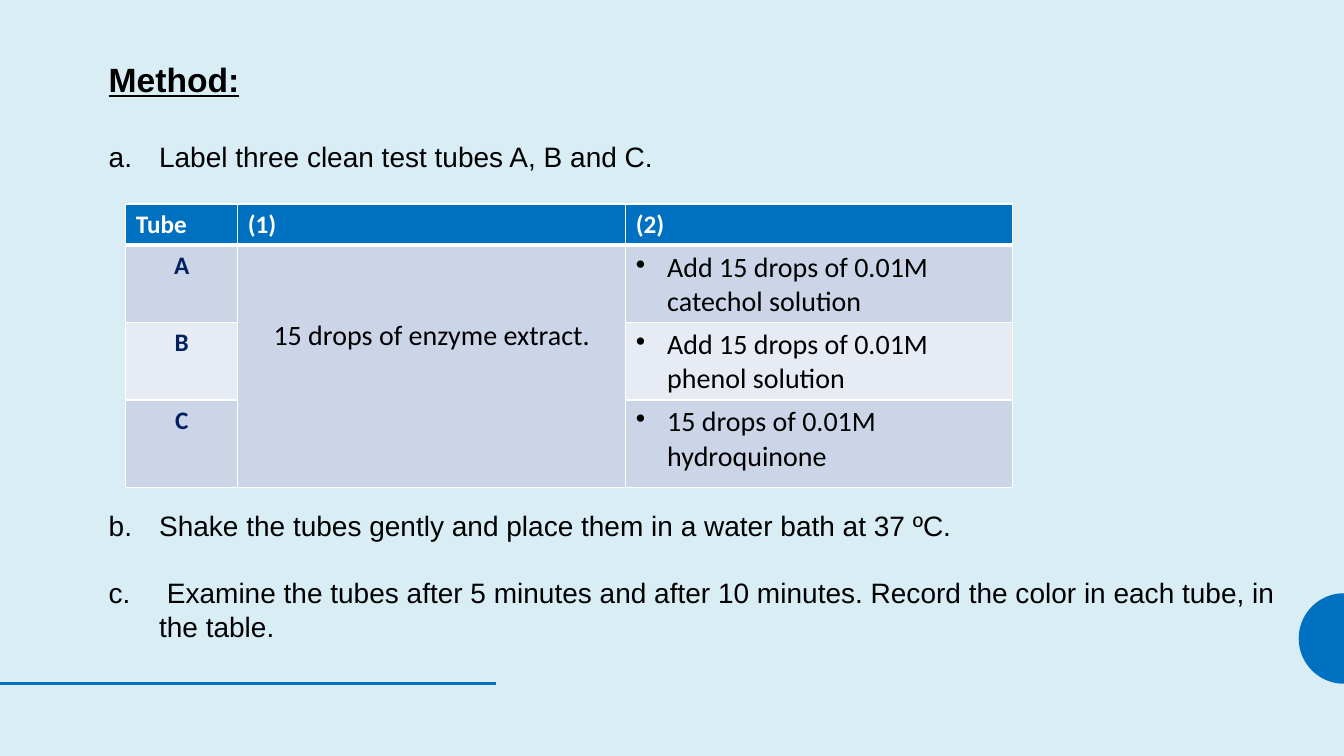
from dataclasses import dataclass
from math import cos, pi, sin

from lxml import etree
from pptx import Presentation
from pptx.dml.color import RGBColor
from pptx.enum.shapes import MSO_CONNECTOR
from pptx.enum.text import MSO_ANCHOR, PP_ALIGN
from pptx.oxml.ns import qn
from pptx.util import Cm, Pt


@dataclass(frozen=True)
class Theme:
    background: str = "D9EDF5"
    accent: str = "0070C0"
    ink: str = "000000"
    navy: str = "002060"
    white: str = "FFFFFF"
    band_dark: str = "CCD5E8"
    band_light: str = "E7EBF4"
    heading_font: str = "Arial"
    table_font: str = "Calibri"
    title: int = 24
    body: int = 20
    label: int = 18
    leading: float = 1.2


def paint(fill, color):
    fill.solid()
    fill.fore_color.rgb = RGBColor.from_string(color)


def write(p, text, *, font, size, color, bold=False, underline=False,
          align=PP_ALIGN.LEFT, leading=None, before=0, bullet=None, indent=0):
    """Fill a paragraph; bullet is a (tag, attributes) pair."""
    if bullet:
        tag, attributes = bullet
        pPr = p._p.get_or_add_pPr()
        pPr.set("marL", str(Cm(indent)))
        pPr.set("indent", str(-Cm(indent)))
        etree.SubElement(pPr, qn(tag), attributes)
    p.alignment = align
    if leading:
        p.line_spacing = Pt(leading)
    if before:
        p.space_before = Pt(before)
    r = p.add_run()
    r.text = text
    r.font.name = font
    r.font.size = Pt(size)
    r.font.bold = bold
    r.font.underline = underline
    r.font.color.rgb = RGBColor.from_string(color)


class SlideBuilder:
    def __init__(self, slide, theme):
        self.slide, self.theme = slide, theme
        paint(slide.background.fill, theme.background)

    def half_disc(self, cx, cy, radius, steps=48):
        angles = [pi / 2 + pi * i / steps for i in range(steps + 1)]
        points = [(Cm(cx + radius * cos(a)), Cm(cy + radius * sin(a))) for a in angles]
        builder = self.slide.shapes.build_freeform(*points[0])
        builder.add_line_segments(points[1:], close=True)
        sp = builder.convert_to_shape()
        sp.shadow.inherit = False
        paint(sp.fill, self.theme.accent)
        sp.line.fill.background()

    def rule(self, x1, x2, y):
        line = self.slide.shapes.add_connector(
            MSO_CONNECTOR.STRAIGHT, Cm(x1), Cm(y), Cm(x2), Cm(y))
        line.line.color.rgb = RGBColor.from_string(self.theme.accent)
        line.line.width = Pt(2)
        etree.SubElement(line._element.spPr, qn("a:effectLst"))

    def steps(self, box, title, items):
        """Title, then lettered items given as (text, blank lines above)."""
        t = self.theme
        tf = self.slide.shapes.add_textbox(*map(Cm, box)).text_frame
        tf.word_wrap = True
        tf.vertical_anchor = MSO_ANCHOR.MIDDLE
        write(tf.paragraphs[0], title, font=t.heading_font, size=t.title, color=t.ink,
              bold=True, underline=True, leading=t.title * t.leading)
        for text, before in items:
            write(tf.add_paragraph(), text, font=t.heading_font, size=t.body, color=t.ink,
                  leading=t.body * t.leading, before=before, indent=1.27,
                  bullet=("a:buAutoNum", {"type": "alphaLcPeriod"}))

    def cell(self, cell, text, fill, top=1, bottom=1, **style):
        tcPr = cell._tc.get_or_add_tcPr()
        for side, width in (("L", 1), ("R", 1), ("T", top), ("B", bottom)):
            ln = etree.SubElement(tcPr, qn(f"a:ln{side}"), {"w": str(Pt(width))})
            solid = etree.SubElement(ln, qn("a:solidFill"))
            etree.SubElement(solid, qn("a:srgbClr"), {"val": self.theme.white})
        paint(cell.fill, fill)
        if text:
            write(cell.text_frame.paragraphs[0], text, font=self.theme.table_font, **style)

    def tube_table(self, left, top, widths, heights, header, shared, tubes):
        t = self.theme
        table = self.slide.shapes.add_table(
            len(heights), len(widths), Cm(left), Cm(top),
            Cm(sum(widths)), Cm(sum(heights))).table
        for column, width in zip(table.columns, widths):
            column.width = Cm(width)
        for row, height in zip(table.rows, heights):
            row.height = Cm(height)

        # Header row
        for i, text in enumerate(header):
            self.cell(table.cell(0, i), text, t.accent, bottom=3,
                      size=t.label, color=t.white, bold=True)

        # One row per tube, with a shared middle cell
        for i, (tube, step) in enumerate(tubes, 1):
            fill = t.band_dark if i % 2 else t.band_light
            edge = 3 if i == 1 else 1
            self.cell(table.cell(i, 0), tube, fill, top=edge, size=t.label,
                      color=t.navy, bold=True, align=PP_ALIGN.CENTER)
            self.cell(table.cell(i, 1), shared if i == 1 else "", t.band_dark, top=edge,
                      size=t.body, color=t.ink, align=PP_ALIGN.CENTER)
            self.cell(table.cell(i, 2), step, fill, top=edge, size=t.body, color=t.ink,
                      bullet=("a:buChar", {"char": "•"}), indent=0.79)
        middle = table.cell(1, 1)
        middle.merge(table.cell(len(tubes), 1))
        middle.margin_top = Cm(1.85)


def main():
    prs = Presentation()
    prs.slide_width, prs.slide_height = Cm(33.87), Cm(19.05)
    theme = Theme()
    page = SlideBuilder(prs.slides.add_slide(prs.slide_layouts[6]), theme)

    # Decoration
    page.half_disc(33.87, 16.09, 1.14)
    page.rule(0, 12.5, 17.22)

    # Method steps; the second leaves room for the table
    line = theme.body * theme.leading
    page.steps((2.49, 1.27, 30.63, 15.14), "Method:", [
        ("Label three clean test tubes A, B and C.", theme.title * theme.leading),
        ("Shake the tubes gently and place them in a water bath at 37 ºC.", 10 * line),
        (" Examine the tubes after 5 minutes and after 10 minutes. "
         "Record the color in each tube, in the table.", line),
    ])

    # Tube table
    page.tube_table(
        3.17, 5.14, (2.82, 9.78, 9.75), (1.04, 1.95, 1.95, 2.2),
        ("Tube", "(1)", "(2)"), "15 drops of enzyme extract.",
        [("A", "Add 15 drops of 0.01M catechol solution"),
         ("B", "Add 15 drops of 0.01M phenol solution"),
         ("C", "15 drops of 0.01M hydroquinone")])

    prs.save("out.pptx")


if __name__ == "__main__":
    main()
